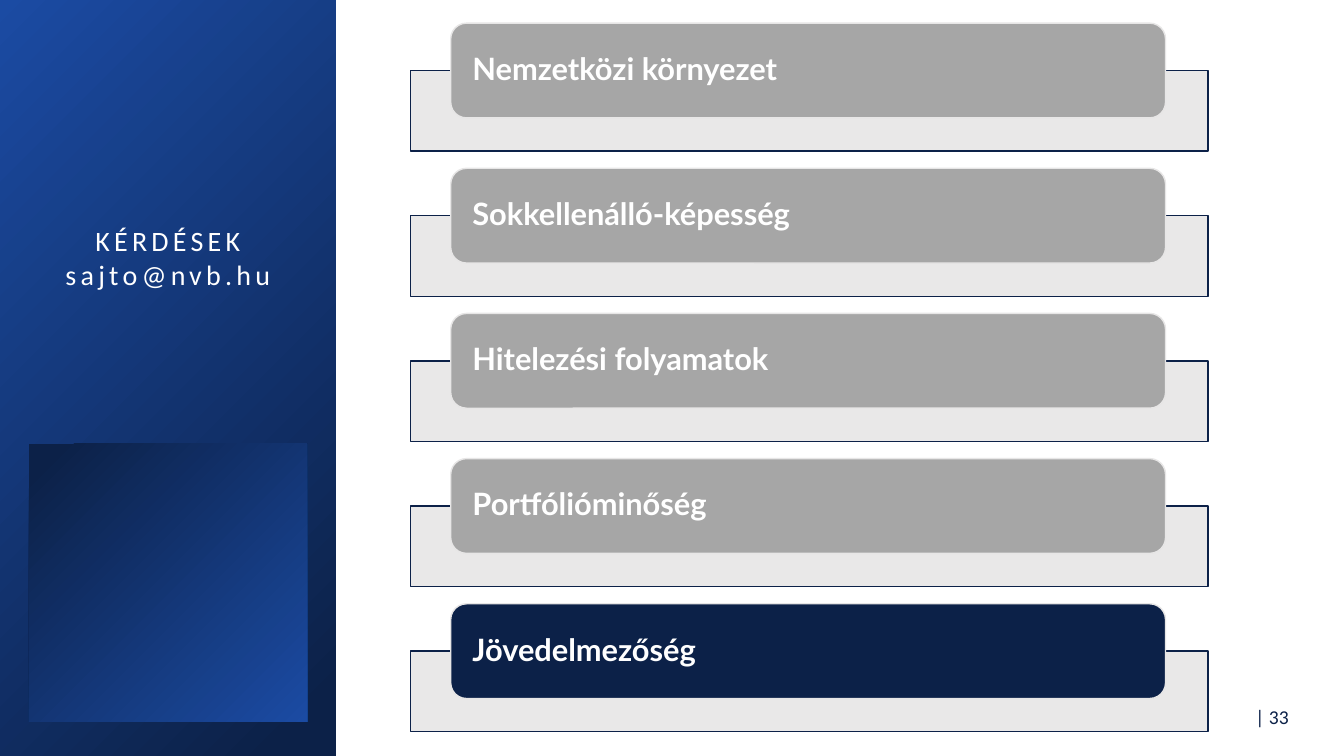
from dataclasses import dataclass

from lxml.etree import SubElement
from pptx import Presentation
from pptx.dml.color import RGBColor
from pptx.enum.shapes import MSO_SHAPE
from pptx.enum.text import MSO_ANCHOR, PP_ALIGN
from pptx.oxml.ns import qn
from pptx.util import Inches, Pt

CONTACT = ["KÉRDÉSEK", "sajto@nvb.hu"]
TOPICS = [
    "Nemzetközi környezet",
    "Sokkellenálló-képesség",
    "Hitelezési folyamatok",
    "Portfólióminőség",
    "Jövedelmezőség",
]
CURRENT_TOPIC = "Jövedelmezőség"
PAGE_NUMBER = "| 33"


@dataclass(frozen=True)
class Theme:
    navy: str = "0C2148"
    blue: str = "1B4BA3"
    grey: str = "A6A6A6"
    pale: str = "E7E6E6"
    white: str = "FFFFFF"
    body_font: str = "Calibri"
    topic_font: str = "Lato"
    contact_size: int = 20
    topic_size: int = 22
    page_size: int = 14


THEME = Theme()
WIDTH, HEIGHT = 13.33, 7.5
PANEL_WIDTH = WIDTH / 4
SQUARE = 2.76
ROW_TOP, ROW_PITCH = 0.23, 1.44
TAB_LEFT, TAB_WIDTH, TAB_HEIGHT = 4.47, 7.09, 0.94
TRAY_LEFT, TRAY_WIDTH, TRAY_HEIGHT = 4.07, 7.91, 0.8
TRAY_DROP = TAB_HEIGHT / 2


def color(code):
    return RGBColor.from_string(code)


def add_box(slide, kind, left, top, width, height, fill=None, line=None):
    box = slide.shapes.add_shape(
        kind, Inches(left), Inches(top), Inches(width), Inches(height))
    box.shadow.inherit = False
    if fill:
        box.fill.solid()
        box.fill.fore_color.rgb = color(fill)
    if line:
        box.line.color.rgb = color(line)
        box.line.width = Pt(1)
    else:
        box.line.fill.background()
    return box


def add_gradient_box(slide, left, top, width, height, rotation=0):
    box = add_box(slide, MSO_SHAPE.RECTANGLE, left, top, width, height)
    box.rotation = rotation
    box.fill.gradient()
    box.fill.gradient_angle = 135
    stops = [(0.06, THEME.navy), (1, THEME.blue)]
    for stop, (position, code) in zip(box.fill.gradient_stops, stops):
        stop.position = position
        stop.color.rgb = color(code)


def write(box, lines, size, font, code, align=PP_ALIGN.LEFT, anchor=MSO_ANCHOR.MIDDLE,
          bold=False, tracking=0, line_spacing=None):
    """Fill a box with one paragraph per line; tracking is in points."""
    frame = box.text_frame
    frame.word_wrap = True
    frame.vertical_anchor = anchor
    for index, line in enumerate(lines):
        para = frame.add_paragraph() if index else frame.paragraphs[0]
        para.alignment = align
        para.line_spacing = line_spacing
        span = para.add_run()
        span.text = line
        span.font.size = Pt(size)
        span.font.name = font
        span.font.bold = bold
        span.font.color.rgb = color(code)
        if tracking:
            span.font._element.set("spc", str(tracking * 100))


def add_text(slide, left, top, width, height, lines, **style):
    box = slide.shapes.add_textbox(
        Inches(left), Inches(top), Inches(width), Inches(height))
    write(box, lines, **style)


def add_topic(slide, top, topic):
    tray = add_box(slide, MSO_SHAPE.RECTANGLE, TRAY_LEFT, top + TRAY_DROP,
                   TRAY_WIDTH, TRAY_HEIGHT, THEME.pale, THEME.navy)
    tray_color = tray.fill._xPr.find(qn("a:solidFill"))[0]
    SubElement(tray_color, qn("a:alpha")).set("val", "90000")

    tab_fill = THEME.navy if topic == CURRENT_TOPIC else THEME.grey
    tab = add_box(slide, MSO_SHAPE.ROUNDED_RECTANGLE, TAB_LEFT, top,
                  TAB_WIDTH, TAB_HEIGHT, tab_fill, THEME.pale)
    frame = tab.text_frame
    frame.margin_left = frame.margin_right = Inches(0.17)
    frame.margin_top = frame.margin_bottom = 0
    write(tab, [topic], size=THEME.topic_size, font=THEME.topic_font,
          code=THEME.white, bold=True, line_spacing=0.9)


def main():
    deck = Presentation()
    deck.slide_width, deck.slide_height = Inches(WIDTH), Inches(HEIGHT)
    slide = deck.slides.add_slide(deck.slide_layouts[6])

    add_gradient_box(slide, 0, 0, PANEL_WIDTH, HEIGHT)
    add_gradient_box(slide, (PANEL_WIDTH - SQUARE) / 2, 4.4, SQUARE, SQUARE, rotation=180)
    add_text(slide, 0.4, 2.17, 2.53, 0.77, CONTACT, size=THEME.contact_size,
             font=THEME.body_font, code=THEME.white, align=PP_ALIGN.CENTER,
             anchor=MSO_ANCHOR.TOP, tracking=3)
    add_text(slide, 12.19, 6.9, 0.69, 0.41, [PAGE_NUMBER], size=THEME.page_size,
             font=THEME.body_font, code=THEME.navy, align=PP_ALIGN.RIGHT)

    for row, topic in enumerate(TOPICS):
        add_topic(slide, ROW_TOP + row * ROW_PITCH, topic)

    deck.save("out.pptx")


if __name__ == "__main__":
    main()
